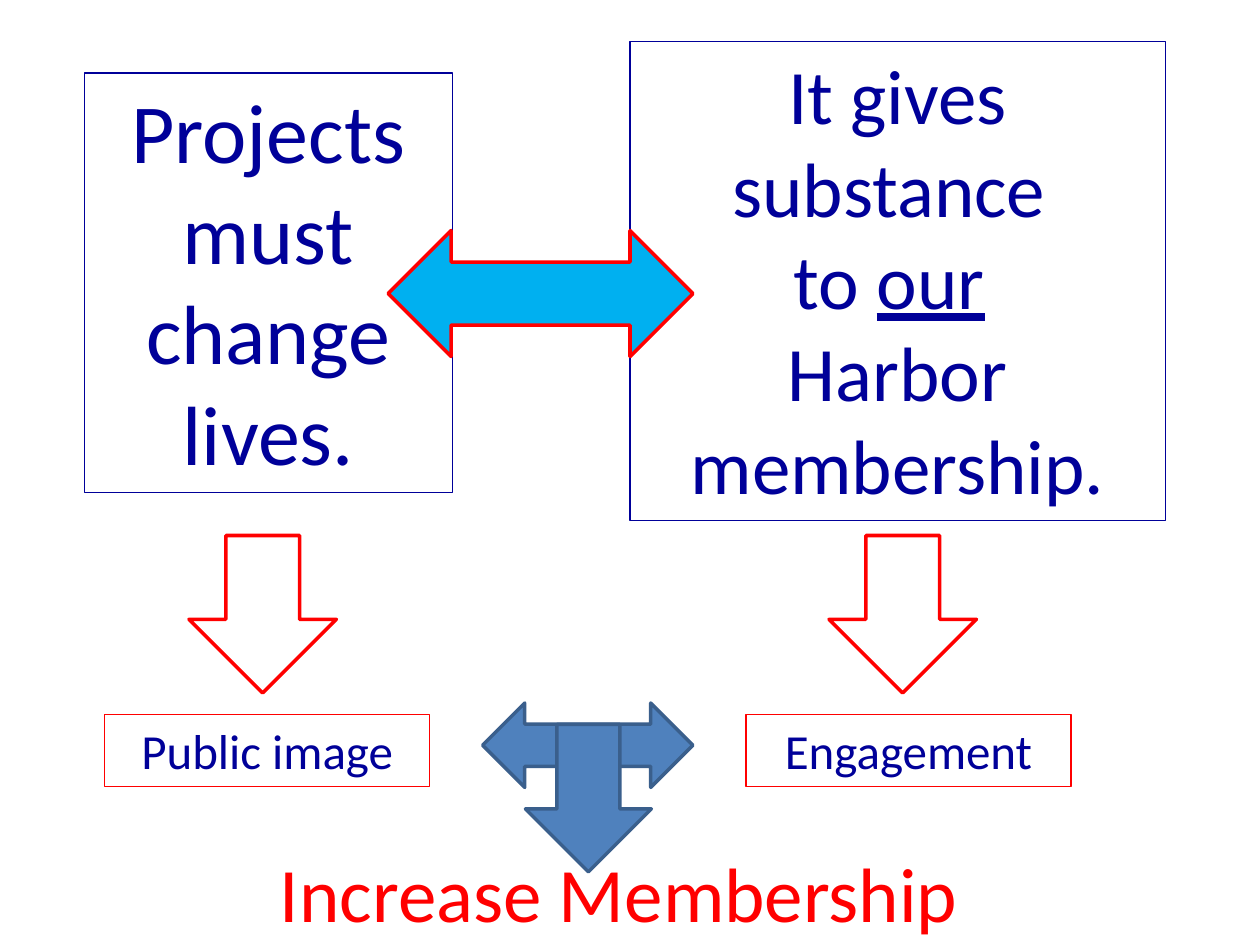
from pptx import Presentation
from pptx.dml.color import RGBColor
from pptx.enum.shapes import MSO_SHAPE
from pptx.enum.text import MSO_ANCHOR, PP_ALIGN
from pptx.util import Inches, Pt

RECT = MSO_SHAPE.RECTANGLE
DOWN = MSO_SHAPE.DOWN_ARROW
BOTH = MSO_SHAPE.LEFT_RIGHT_ARROW
TOP = MSO_ANCHOR.TOP
CENTER = PP_ALIGN.CENTER

COLORS = {"navy": "000099", "red": "FF0000", "sky": "00B0F0",
          "blue": "4F81BD", "steel": "3A5F8C"}
FONT = "Calibri"
UNDERLINED = "our"

BOXES = [
    ((0.67, 0.58, 2.92, 3.33), "navy", 48, [["Projects must change lives."]]),
    ((5, 0.33, 4.25, 3.8), "navy", 44,
     [["It gives substance "], ["to ", UNDERLINED, " "], ["Harbor membership."]]),
]
OUTCOMES = [(0.83, "Public image"), (5.92, "Engagement")]
ARROWS = [
    (BOTH, (3.08, 1.83, 2.42, 1), "sky", "red"),
    (DOWN, (1.5, 4.25, 1.17, 1.25), None, "red"),
    (DOWN, (6.58, 4.25, 1.17, 1.25), None, "red"),
    (BOTH, (3.83, 5.58, 1.67, 0.67), "blue", "steel"),
    (DOWN, (4.17, 5.75, 1, 1.17), "blue", "steel"),
]
CONCLUSION = ((1.33, 6.66, 7.17, 0.84), "Increase Membership")


def rgb(name):
    """Return the named palette colour."""
    return RGBColor.from_string(COLORS[name])


def add_outline(s, kind, at, fill, line, width):
    """Add a preset shape with an optional fill and a coloured outline."""
    sp = s.shapes.add_shape(kind, *map(Inches, at))
    sp.shadow.inherit = False
    if fill:
        sp.fill.solid()
        sp.fill.fore_color.rgb = rgb(fill)
    else:
        sp.fill.background()
    sp.line.color.rgb = rgb(line)
    sp.line.width = Pt(width)
    return sp


def write(sp, paragraphs, size, color):
    """Write centred paragraphs made of text runs."""
    tf = sp.text_frame
    tf.word_wrap = True
    tf.vertical_anchor = TOP
    for i, parts in enumerate(paragraphs):
        p = tf.add_paragraph() if i else tf.paragraphs[0]
        p.alignment = CENTER
        for part in parts:
            r = p.add_run()
            r.text = part
            r.font.name = FONT
            r.font.size = Pt(size)
            r.font.color.rgb = rgb(color)
            if part == UNDERLINED:
                r.font.underline = True


def main():
    """Build the slide linking projects, membership and engagement."""
    prs = Presentation()
    prs.slide_width, prs.slide_height = Inches(10), Inches(7.5)
    s = prs.slides.add_slide(prs.slide_layouts[6])
    outcome_boxes = [((left, 5.67, 2.58, 0.57), "red", 28, [[text]])
                     for left, text in OUTCOMES]
    for at, line, size, paragraphs in BOXES + outcome_boxes:
        sp = add_outline(s, RECT, at, None, line, 0.75)
        write(sp, paragraphs, size, "navy")
    for kind, at, fill, line in ARROWS:
        add_outline(s, kind, at, fill, line, 2)
    at, text = CONCLUSION
    write(s.shapes.add_textbox(*map(Inches, at)), [[text]], 44, "red")
    prs.save("out.pptx")


if __name__ == "__main__":
    main()
